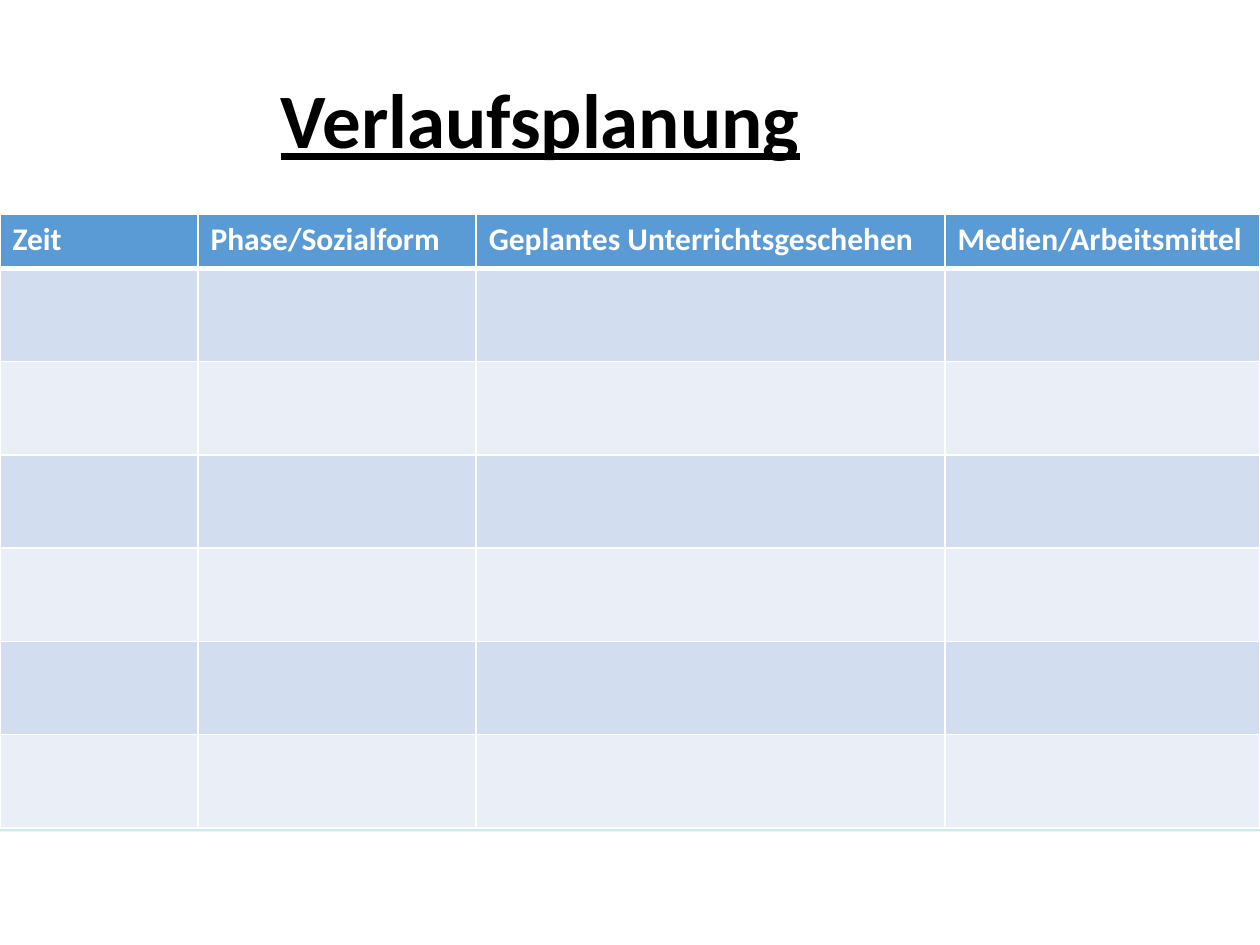
from lxml.etree import SubElement as Sub
from pptx import Presentation
from pptx.dml.color import RGBColor as RGB
from pptx.enum.shapes import MSO_SHAPE as Shape
from pptx.enum.text import MSO_ANCHOR as Anchor
from pptx.oxml.ns import qn
from pptx.util import Cm, Pt

TITLE = "Verlaufsplanung"
COLS = [
    ("Zeit", 3.99),
    ("Phase/Sozialform", 5.61),
    ("Geplantes Unterrichtsgeschehen", 9.45),
    ("Medien/Arbeitsmittel", 6.35),
]
PHASES = 6
HEAD_H, ROW_H = 1.09, 1.88
WIDTH, HEIGHT, TOP = 25.4, 19.05, 4.32
FONT = "Calibri"
HEX = {
    "panel": "CCE9F2",
    "head": "5B9BD5",
    "odd": "D2DEEF",
    "even": "EAEFF7",
    "line": "FFFFFF",
    "light": "FFFFFF",
    "dark": "000000",
}


def paint(fill, name):
    fill.solid()
    fill.fore_color.rgb = RGB.from_string(HEX[name])


def write(para, text, size, color):
    run = para.add_run()
    run.text = text
    font = run.font
    font.name, font.size, font.bold = FONT, Pt(size), True
    font.color.rgb = RGB.from_string(HEX[color])
    return run


def edge(cell, low):
    """Draw the cell borders; low is the width of the bottom one in points."""
    props = cell._tc.get_or_add_tcPr()
    for side, width in zip("LRTB", (1, 1, 1, low)):
        line = Sub(props, qn(f"a:ln{side}"), w=str(Pt(width)))
        solid = Sub(line, qn("a:solidFill"))
        Sub(solid, qn("a:srgbClr"), val=HEX["line"])


def add_panel(slide):
    panel = slide.shapes.add_shape(
        Shape.RECTANGLE, 0, Cm(4.67), Cm(WIDTH), Cm(12.09))
    panel.shadow.inherit = False
    paint(panel.fill, "panel")
    panel.line.fill.background()


def add_plan(slide):
    high = HEAD_H + PHASES * ROW_H
    table = slide.shapes.add_table(
        PHASES + 1, len(COLS), 0, Cm(TOP), Cm(WIDTH), Cm(high)).table
    for col, (label, width) in zip(table.columns, COLS):
        col.width = Cm(width)
    for i, row in enumerate(table.rows):
        row.height = Cm(ROW_H if i else HEAD_H)
        tone = ("odd" if i % 2 else "even") if i else "head"
        for cell, (label, width) in zip(row.cells, COLS):
            edge(cell, 1 if i else 3)
            paint(cell.fill, tone)
            if i == 0:
                write(cell.text_frame.paragraphs[0], label, 18, "light")


def add_title(slide):
    box = slide.shapes.add_textbox(Cm(0.66), Cm(0.64), Cm(23.04), Cm(3.71))
    frame = box.text_frame
    frame.word_wrap = True
    frame.vertical_anchor = Anchor.MIDDLE
    frame.margin_left = Cm(5)
    para = frame.paragraphs[0]
    para.line_spacing = 0.9
    write(para, TITLE, 44, "dark").font.underline = True


def main():
    deck = Presentation()
    deck.slide_width, deck.slide_height = Cm(WIDTH), Cm(HEIGHT)
    slide = deck.slides.add_slide(deck.slide_layouts[6])
    paint(slide.background.fill, "light")
    add_panel(slide)
    add_plan(slide)
    add_title(slide)
    deck.save("out.pptx")


if __name__ == "__main__":
    main()
